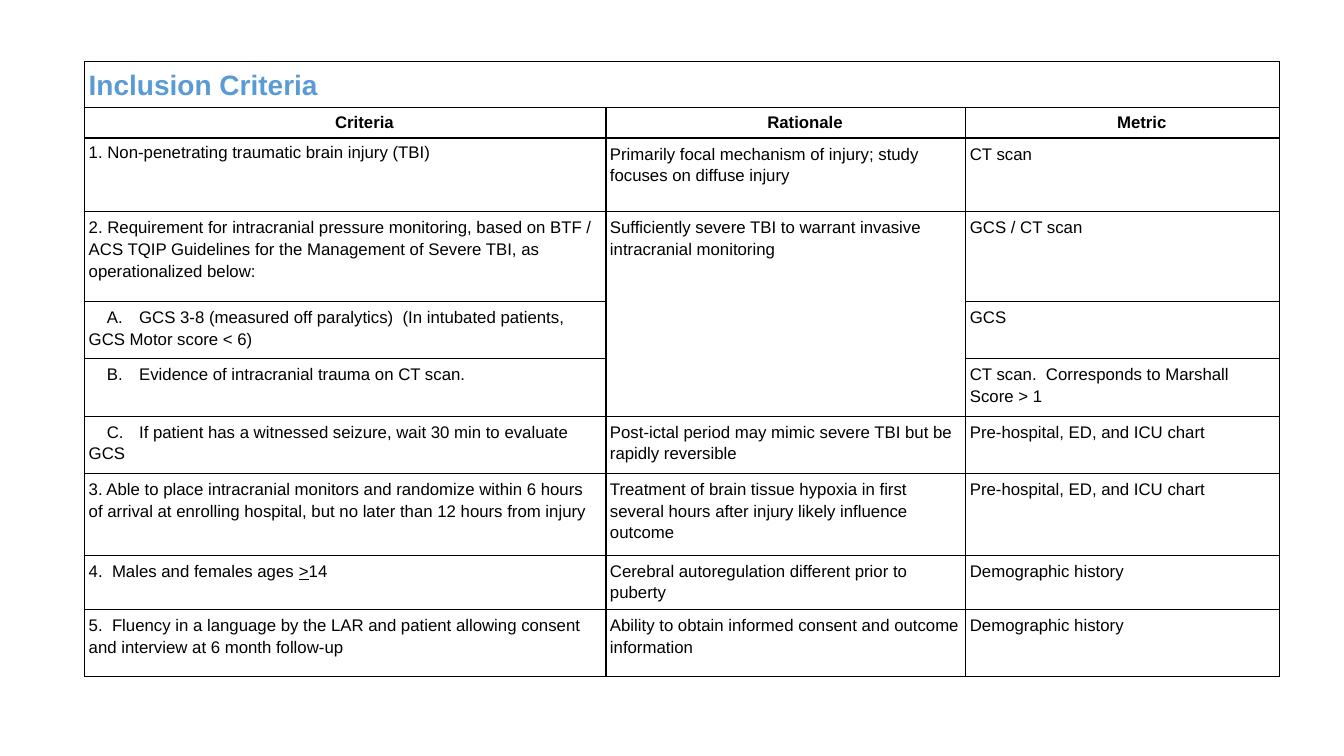
"""Build the slide with the table of study inclusion criteria."""
import pptx
import pptx.dml.color
import pptx.enum.text
import pptx.oxml.ns
import pptx.util
from lxml import etree

Inches = pptx.util.Inches
Align = pptx.enum.text.PP_ALIGN
qn = pptx.oxml.ns.qn
BLUE = pptx.dml.color.RGBColor(0x5B, 0x9B, 0xD5)
BLACK = pptx.dml.color.RGBColor(0x00, 0x00, 0x00)

COLUMNS = [5.17, 3.57, 3.11]
ROWS = [0.46, 0.3, 0.73, 0.89, 0.57, 0.57, 0.57, 0.81, 0.54, 0.66]
TITLE_ROW, HEADER_ROW, FIRST_CRITERION = 0, 1, 2
MARGIN = Inches(0.04)
HEADER_INDENT = 0.38
ITEM_INDENT = 0.18
ITEM_TABS = {4: 0.56, 5: 0.53, 6: 0.49}

CONTENT = [
    ["Inclusion Criteria", "", ""],
    ["Criteria", "Rationale", "Metric"],
    ["1. Non-penetrating traumatic brain injury (TBI)",
     "Primarily focal mechanism of injury; study focuses on diffuse injury",
     "CT scan"],
    ["2. Requirement for intracranial pressure monitoring, based on BTF / ACS TQIP "
     "Guidelines for the Management of Severe TBI, as operationalized below:",
     "Sufficiently severe TBI to warrant invasive intracranial monitoring",
     "GCS / CT scan"],
    ["A.\tGCS 3-8 (measured off paralytics)  (In intubated patients, GCS Motor score < 6)",
     "", "GCS"],
    ["B.\tEvidence of intracranial trauma on CT scan.",
     "", "CT scan.  Corresponds to Marshall Score > 1"],
    ["C.\tIf patient has a witnessed seizure, wait 30 min to evaluate GCS",
     "Post-ictal period may mimic severe TBI but be rapidly reversible",
     "Pre-hospital, ED, and ICU chart"],
    ["3. Able to place intracranial monitors and randomize within 6 hours of arrival "
     "at enrolling hospital, but no later than 12 hours from injury",
     "Treatment of brain tissue hypoxia in first several hours after injury likely "
     "influence outcome",
     "Pre-hospital, ED, and ICU chart"],
    [["4.  Males and females ages ", ">", "14"],
     "Cerebral autoregulation different prior to puberty",
     "Demographic history"],
    ["5.  Fluency in a language by the LAR and patient allowing consent and interview "
     "at 6 month follow-up",
     "Ability to obtain informed consent and outcome information",
     "Demographic history"],
]


def draw_borders(cell):
    """Give a cell a thin black line on every side."""
    properties = cell._tc.get_or_add_tcPr()
    for side in ("a:lnL", "a:lnR", "a:lnT", "a:lnB"):
        line = etree.SubElement(properties, qn(side), w=str(pptx.util.Pt(1)))
        fill = etree.SubElement(line, qn("a:solidFill"))
        etree.SubElement(fill, qn("a:srgbClr"), val=str(BLACK))


def indent_first_line(para, indent, tab=None):
    """Indent the first line and set an optional tab stop, in inches."""
    properties = para._p.get_or_add_pPr()
    properties.set("marL", "0")
    properties.set("indent", str(Inches(indent)))
    if tab:
        stops = etree.SubElement(properties, qn("a:tabLst"))
        etree.SubElement(stops, qn("a:tab"), pos=str(Inches(tab)), algn="l")


deck = pptx.Presentation()
deck.slide_width, deck.slide_height = Inches(13.33), Inches(7.5)
page = deck.slides.add_slide(deck.slide_layouts[6])

table = page.shapes.add_table(
    len(ROWS), len(COLUMNS), Inches(0.84), Inches(0.61),
    Inches(sum(COLUMNS)), Inches(sum(ROWS))).table
table.first_row = table.horz_banding = False
for column, width in zip(table.columns, COLUMNS):
    column.width = Inches(width)
for row, height in zip(table.rows, ROWS):
    row.height = Inches(height)
table.cell(TITLE_ROW, 0).merge(table.cell(TITLE_ROW, 2))
table.cell(3, 1).merge(table.cell(5, 1))

for row_index, texts in enumerate(CONTENT):
    for column_index, text in enumerate(texts):
        cell = table.cell(row_index, column_index)
        draw_borders(cell)
        cell.fill.background()
        cell.margin_left = cell.margin_right = MARGIN
        cell.margin_top = cell.margin_bottom = MARGIN
        if not text:
            continue
        para = cell.text_frame.paragraphs[0]
        para.line_spacing = 1.15
        if row_index == HEADER_ROW:
            para.alignment = Align.CENTER
            para.line_spacing = 1.07
            indent_first_line(para, HEADER_INDENT)
        elif row_index == FIRST_CRITERION and column_index == 0:
            para.alignment = Align.JUSTIFY
            para.line_spacing = 1.07
        elif row_index in ITEM_TABS and column_index == 0:
            indent_first_line(para, ITEM_INDENT, ITEM_TABS[row_index])
        para.font.name = "Arial"
        para.font.size = pptx.util.Pt(20 if row_index == TITLE_ROW else 12)
        para.font.bold = row_index <= HEADER_ROW
        para.font.color.rgb = BLUE if row_index == TITLE_ROW else BLACK
        for part in [text] if isinstance(text, str) else text:
            span = para.add_run()
            span.text = part
            if part == ">":
                span.font.underline = True

deck.save("out.pptx")
